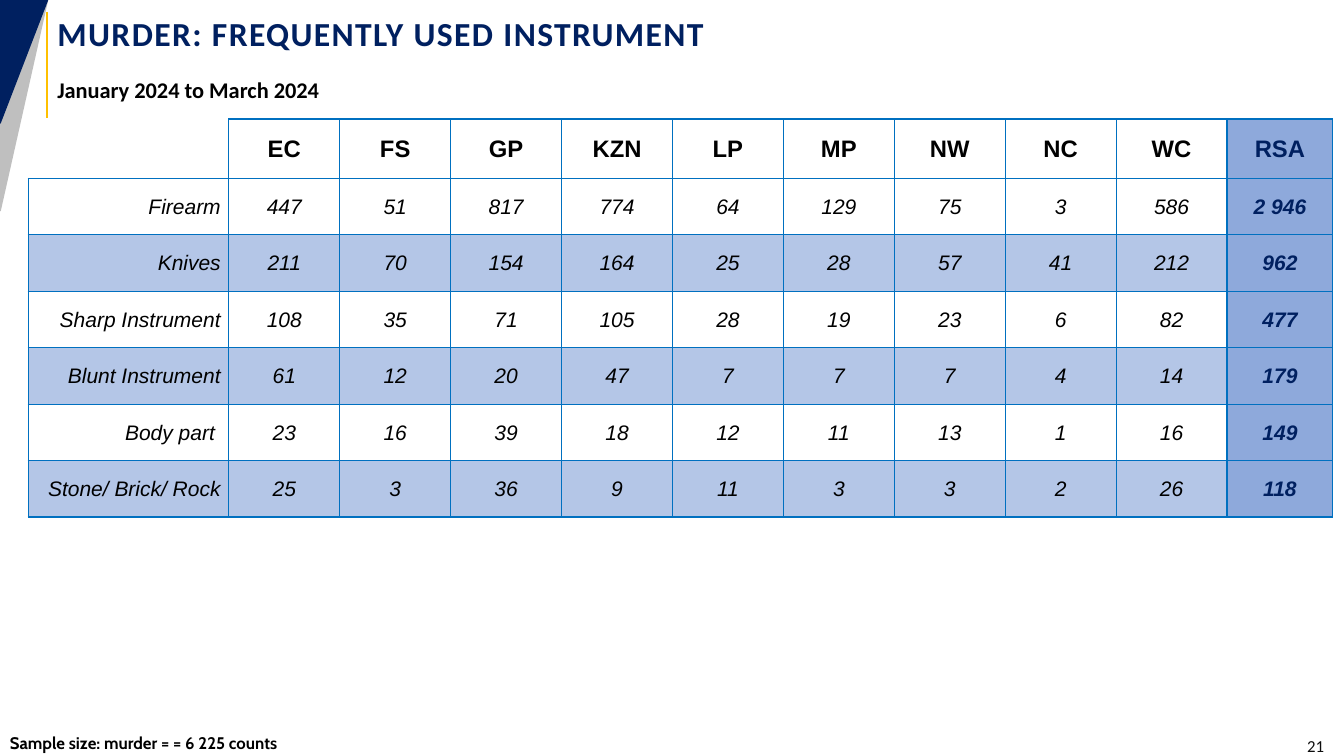
from lxml import etree
from pptx import Presentation
from pptx.dml.color import RGBColor
from pptx.enum.shapes import MSO_CONNECTOR, MSO_SHAPE
from pptx.enum.text import MSO_ANCHOR, MSO_AUTO_SIZE, PP_ALIGN
from pptx.oxml import parse_xml
from pptx.oxml.ns import nsdecls, qn
from pptx.util import Inches, Pt

TRIANGLE = MSO_SHAPE.RIGHT_TRIANGLE
STRAIGHT = MSO_CONNECTOR.STRAIGHT
LEFT, CENTER, RIGHT = PP_ALIGN.LEFT, PP_ALIGN.CENTER, PP_ALIGN.RIGHT
TOP, MIDDLE = MSO_ANCHOR.TOP, MSO_ANCHOR.MIDDLE

COLORS = {
    "navy": "002060", "gray": "BFBFBF", "gold": "FFC000", "black": "000000",
    "ink": "0D0D0D", "band": "B4C6E7", "total": "8EA9DB", "rule": "0070C0",
}
WIDE, HIGH = 13.33, 7.5
EDGE = 0.47

HEADS = ["", "EC", "FS", "GP", "KZN", "LP", "MP", "NW", "NC", "WC", "RSA"]
COUNTS = [
    ["Firearm", 447, 51, 817, 774, 64, 129, 75, 3, 586, "2 946"],
    ["Knives", 211, 70, 154, 164, 25, 28, 57, 41, 212, 962],
    ["Sharp Instrument", 108, 35, 71, 105, 28, 19, 23, 6, 82, 477],
    ["Blunt Instrument", 61, 12, 20, 47, 7, 7, 7, 4, 14, 179],
    ["Body part ", 23, 16, 39, 18, 12, 11, 13, 1, 16, 149],
    ["Stone/ Brick/ Rock", 25, 3, 36, 9, 11, 3, 3, 2, 26, 118],
]


def color(name):
    return RGBColor.from_string(COLORS[name])


def write(frame, text, size, font, tint, bold=False, italic=False, align=LEFT):
    """Fill a text frame with one formatted paragraph and return it."""
    frame.word_wrap = True
    frame.text = text
    para = frame.paragraphs[0]
    para.alignment = align
    for run in para.runs:
        run.font.size = Pt(size)
        run.font.name = font
        run.font.bold = bold
        run.font.italic = italic
        run.font.color.rgb = color(tint)
    return para


deck = Presentation()
deck.slide_width, deck.slide_height = Inches(WIDE), Inches(HIGH)
slide = deck.slides.add_slide(deck.slide_layouts[5])
shapes = slide.shapes

# Corner wedges and the gold rule
for tint, tall in [("gray", 2.09), ("navy", 1.22)]:
    wedge = shapes.add_shape(TRIANGLE, 0, 0, Inches(EDGE), Inches(tall))
    wedge.element.spPr.find(qn("a:xfrm")).set("flipV", "1")
    wedge.shadow.inherit = False
    wedge.fill.solid()
    wedge.fill.fore_color.rgb = color(tint)
    wedge.line.color.rgb = color(tint)
    wedge.line.width = Pt(1.25)

rule = shapes.add_connector(
    STRAIGHT, Inches(EDGE), Inches(1.17), Inches(EDGE), Inches(0.12))
rule.line.color.rgb = color("gold")
rule.line.width = Pt(1.25)
etree.SubElement(rule.element.spPr, qn("a:effectLst"))

# Title and the other texts
title = shapes.title
title.left, title.top = Inches(EDGE), Inches(0.12)
title.width, title.height = Inches(11.96), Inches(0.49)
frame = title.text_frame
frame.auto_size = MSO_AUTO_SIZE.NONE
frame.vertical_anchor = MIDDLE
para = write(frame, "MURDER: FREQUENTLY USED INSTRUMENT", 24, "Calibri",
             "navy", bold=True)
para.line_spacing = 0.8
para.runs[0].font._element.set("spc", "100")

NOTES = [
    ("January 2024 to March 2024", (EDGE, 0.68, 11.96, 0.48),
     16, "Calibri", "black", True, LEFT, TOP),
    ("Sample size: murder = = 6 225 counts", (0, 7.22, WIDE, 0.3),
     12, "Cabin", "black", True, LEFT, TOP),
    ("21", (11.85, 7.27, 1.38, 0.26),
     12, "Calibri", "ink", False, RIGHT, MIDDLE),
]
paras = []
for text, place, size, font, tint, bold, align, anchor in NOTES:
    box = shapes.add_textbox(*map(Inches, place))
    box.text_frame.vertical_anchor = anchor
    paras.append(write(box.text_frame, text, size, font, tint, bold,
                       align=align))
period = paras[0]
period.line_spacing = 1.08
period.space_before, period.space_after = Pt(6), Pt(2)

# Table of counts by province
rows = [HEADS] + COUNTS
last = len(HEADS) - 1
widths = [1.99] + [1.1] * (last - 1) + [1.05]
heights = [0.59] + [0.56] * len(COUNTS)
table = shapes.add_table(
    len(rows), len(HEADS), Inches(0.28), Inches(1.18),
    Inches(sum(widths)), Inches(sum(heights))).table
table.first_row = table.horz_banding = False
for col, width in zip(table.columns, widths):
    col.width = Inches(width)
for row, height in zip(table.rows, heights):
    row.height = Inches(height)

for r, row in enumerate(rows):
    for c, value in enumerate(row):
        cell = table.cell(r, c)
        corner = r == c == 0
        props = cell._tc.get_or_add_tcPr()
        for side in "LRTB":
            if corner and side in "LT":
                paint = "<a:noFill/>"
            else:
                paint = (f'<a:solidFill><a:srgbClr val="{COLORS["rule"]}"/>'
                         "</a:solidFill>")
            props.append(parse_xml(
                f'<a:ln{side} {nsdecls("a")} w="{Pt(1)}">{paint}</a:ln{side}>'))

        if c == last or (r and r % 2 == 0):
            cell.fill.solid()
            cell.fill.fore_color.rgb = color("total" if c == last else "band")
        else:
            cell.fill.background()

        cell.vertical_anchor = MIDDLE
        cell.margin_left = cell.margin_top = Inches(0.01)
        cell.margin_right = Inches(0.01 if c else 0.08)
        cell.margin_bottom = 0
        if not corner:
            write(cell.text_frame, str(value), 15 if r else 17, "Arial",
                  "navy" if c == last else "black",
                  bold=r == 0 or c == last, italic=r > 0,
                  align=CENTER if c else RIGHT)

deck.save("out.pptx")
